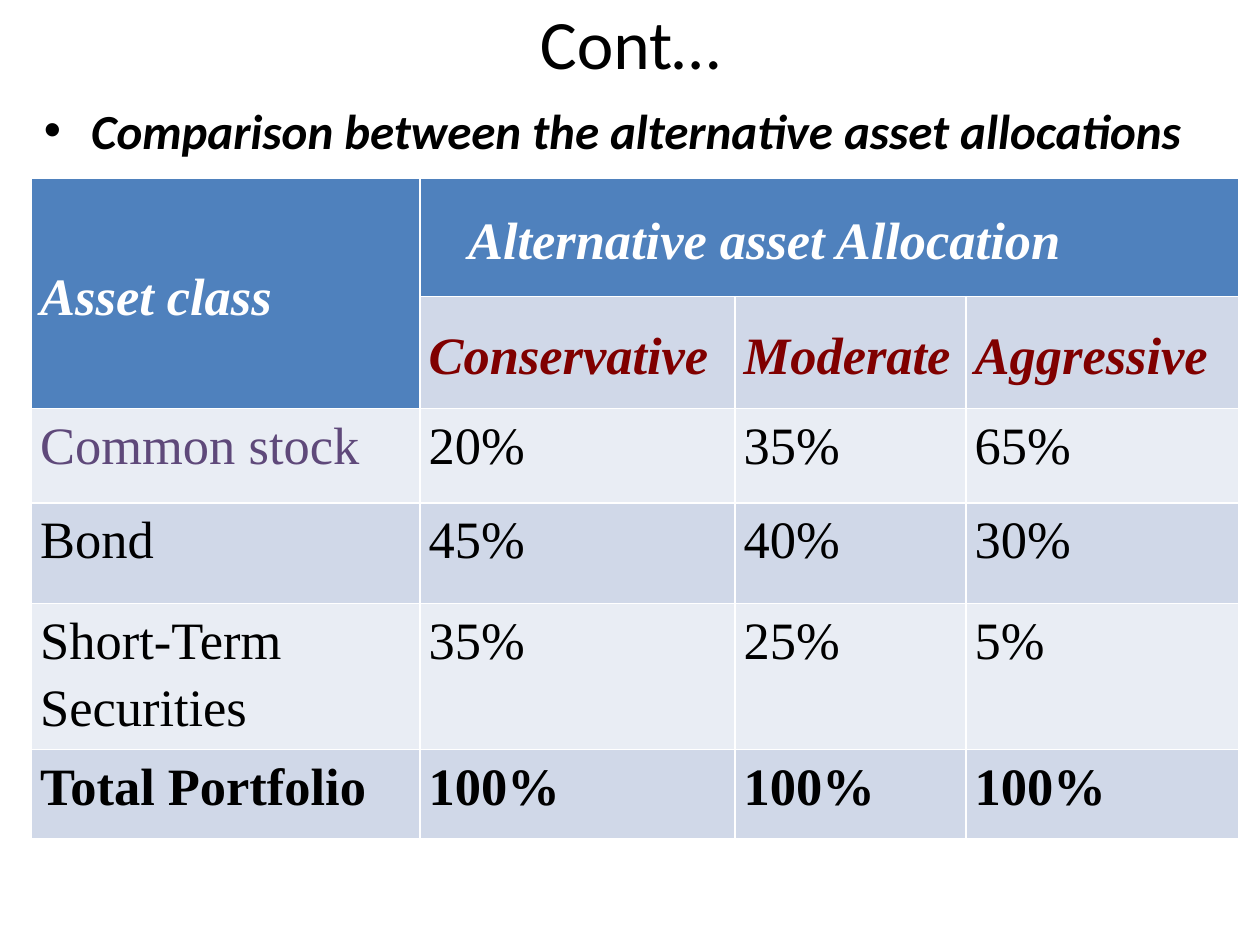
from pptx import Presentation
from pptx.dml.color import RGBColor
from pptx.enum.text import MSO_ANCHOR, PP_ALIGN
from pptx.oxml.xmlchemy import OxmlElement
from pptx.util import Pt

COLORS = {
    "black": "000000",
    "white": "FFFFFF",
    "header": "4F81BD",
    "band_dark": "D0D8E8",
    "band_light": "E9EDF4",
    "maroon": "800000",
    "purple": "5F497A",
}
HEADINGS = ["Conservative", "Moderate", "Aggressive"]
ALLOCATIONS = [
    ["Common stock", "20%", "35%", "65%"],
    ["Bond", "45%", "40%", "30%"],
    ["Short-Term Securities", "35%", "25%", "5%"],
    ["Total Portfolio", "100%", "100%", "100%"],
]
COLUMN_WIDTHS = [222, 180, 132, 156]
ROW_HEIGHTS = [67.5, 64, 54, 57.5, 83.5, 51]


def format_runs(paragraph, font_name, size, color, bold=False, italic=False):
    for run in paragraph.runs:
        run.font.name = font_name
        run.font.size = Pt(size)
        run.font.bold = bold
        run.font.italic = italic
        run.font.color.rgb = RGBColor.from_string(COLORS[color])


def add_text(slide, box, wording):
    frame = slide.shapes.add_textbox(*map(Pt, box)).text_frame
    frame.word_wrap = True
    frame.text = wording
    return frame


def add_title(slide, box):
    title = add_text(slide, box, "Cont…")
    title.vertical_anchor = MSO_ANCHOR.MIDDLE
    title.paragraphs[0].alignment = PP_ALIGN.CENTER
    format_runs(title.paragraphs[0], "Calibri", 39.6, "black")


def add_subtitle(slide, box):
    subtitle = add_text(slide, box, "Comparison between the alternative asset allocations")
    paragraph = subtitle.paragraphs[0]
    paragraph.space_before = Pt(5.6)
    format_runs(paragraph, "Calibri", 28, "black", bold=True, italic=True)
    properties = paragraph._p.get_or_add_pPr()
    properties.set("marL", str(Pt(27)))
    properties.set("indent", str(Pt(-27)))
    bullet_font = OxmlElement("a:buFont")
    bullet_font.set("typeface", "Arial")
    bullet = OxmlElement("a:buChar")
    bullet.set("char", "•")
    properties.extend([bullet_font, bullet])


def fill_cell(cell, wording, fill, color, bold=False, italic=False,
              anchor=MSO_ANCHOR.TOP, indent=0):
    cell.fill.solid()
    cell.fill.fore_color.rgb = RGBColor.from_string(COLORS[fill])
    cell.margin_left, cell.margin_right = Pt(5 + indent), Pt(5)
    cell.margin_top = cell.margin_bottom = Pt(0)
    cell.vertical_anchor = anchor
    cell.text_frame.text = wording
    paragraph = cell.text_frame.paragraphs[0]
    paragraph.alignment = PP_ALIGN.JUSTIFY
    paragraph.line_spacing = 1.15
    format_runs(paragraph, "Times New Roman", 30, color, bold, italic)


def add_allocation_table(slide, left, top):
    table = slide.shapes.add_table(
        len(ROW_HEIGHTS), len(COLUMN_WIDTHS), Pt(left), Pt(top),
        Pt(sum(COLUMN_WIDTHS)), Pt(sum(ROW_HEIGHTS))).table
    for column, width in zip(table.columns, COLUMN_WIDTHS):
        column.width = Pt(width)
    for row, height in zip(table.rows, ROW_HEIGHTS):
        row.height = Pt(height)

    table.cell(0, 0).merge(table.cell(1, 0))
    table.cell(0, 1).merge(table.cell(0, 3))
    heading_style = {"bold": True, "italic": True, "anchor": MSO_ANCHOR.MIDDLE}
    fill_cell(table.cell(0, 0), "Asset class", "header", "white", **heading_style)
    fill_cell(table.cell(0, 1), "Alternative asset Allocation", "header", "white",
              indent=22.5, **heading_style)
    for column, heading in enumerate(HEADINGS, 1):
        fill_cell(table.cell(1, column), heading, "band_dark", "maroon", **heading_style)

    for row, allocation in enumerate(ALLOCATIONS, 2):
        band = "band_dark" if row % 2 else "band_light"
        is_total = allocation is ALLOCATIONS[-1]
        for column, wording in enumerate(allocation):
            color = "purple" if wording == "Common stock" else "black"
            fill_cell(table.cell(row, column), wording, band, color, bold=is_total)


def main():
    presentation = Presentation()
    presentation.slide_width, presentation.slide_height = Pt(720), Pt(540)
    slide = presentation.slides.add_slide(presentation.slide_layouts[6])
    add_title(slide, (18, 0, 684, 48))
    add_subtitle(slide, (18, 54, 702, 468))
    add_allocation_table(slide, 18, 102)
    presentation.save("out.pptx")


if __name__ == "__main__":
    main()
